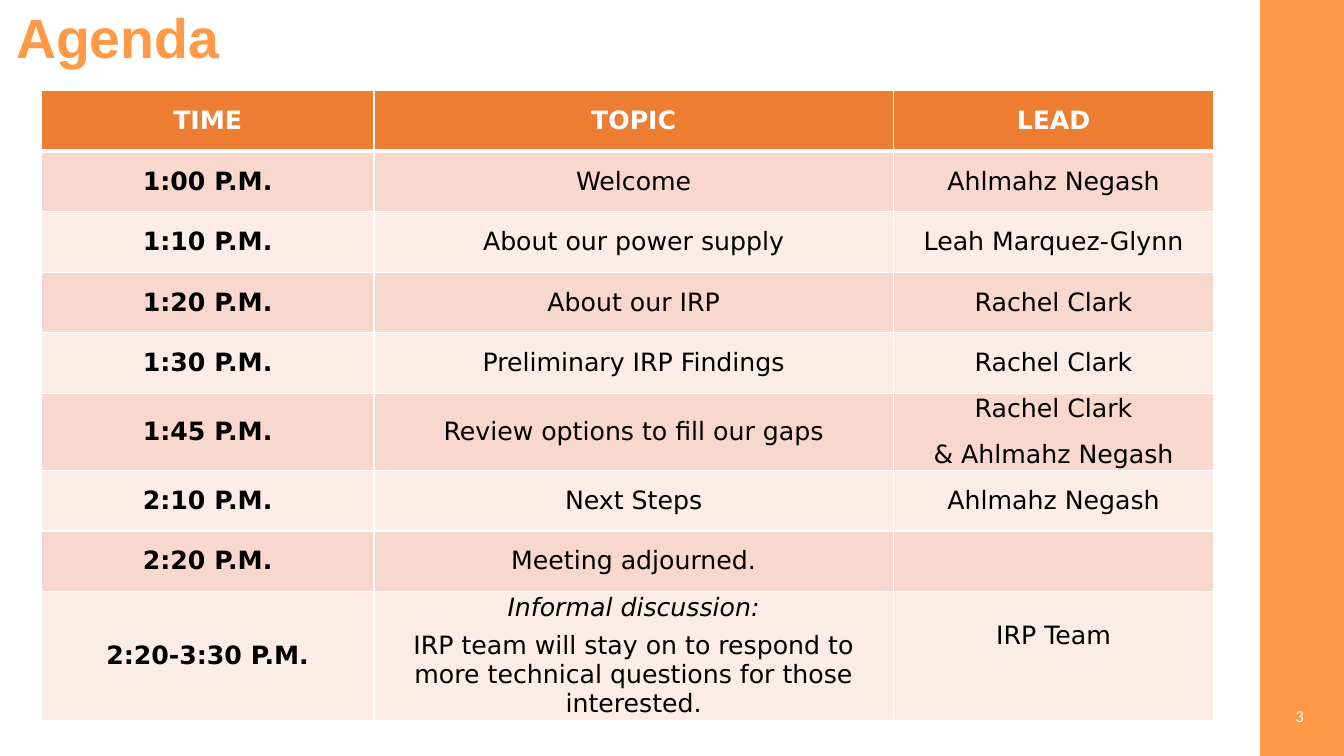
from dataclasses import dataclass

from lxml import etree
from pptx import Presentation
from pptx import util as u
from pptx.dml.color import RGBColor
from pptx.enum import shapes, text
from pptx.oxml.ns import qn


@dataclass(frozen=True)
class Theme:
    """Colours, fonts and type sizes of the agenda slide."""
    accent: str = "FF9946"
    header: str = "ED7D31"
    bands: tuple = ("F8D7CE", "FCECE8")
    white: str = "FFFFFF"
    black: str = "000000"
    title_font: str = "Arial"
    table_font: str = "DejaVu Sans"
    number_font: str = "Calibri"
    title_size: float = 39.6
    table_size: float = 18
    number_size: float = 12


THEME = Theme()
WIDTH, HEIGHT = 13.33, 7.5
COLUMNS = (3.3, 5.15, 3.18)
ROW, DOUBLE_ROW, LAST_ROW = 0.6, 0.75, 1.25
AGENDA = [
    ("TIME", "TOPIC", "LEAD"),
    ("1:00 P.M.", "Welcome", "Ahlmahz Negash"),
    ("1:10 P.M.", "About our power supply", "Leah Marquez-Glynn"),
    ("1:20 P.M.", "About our IRP", "Rachel Clark"),
    ("1:30 P.M.", "Preliminary IRP Findings", "Rachel Clark"),
    ("1:45 P.M.", "Review options to fill our gaps", "Rachel Clark\n& Ahlmahz Negash"),
    ("2:10 P.M.", "Next Steps", "Ahlmahz Negash"),
    ("2:20 P.M.", "Meeting adjourned.", ""),
    ("2:20-3:30 P.M.", "Informal discussion:\nIRP team will stay on to respond to "
     "more technical questions for those interested.", "IRP Team"),
]
ROWS = [ROW] * 5 + [DOUBLE_ROW] + [ROW] * 2 + [LAST_ROW]


def inches(*lengths):
    """Turn lengths in inches into slide units."""
    return [u.Inches(length) for length in lengths]


def style_font(font, name, size, color, bold=False):
    """Give a font its face, size, colour and weight."""
    font.name, font.size, font.bold = name, u.Pt(size), bold
    font.color.rgb = RGBColor.from_string(color)


def add_title(page, box):
    """Place the slide title in its placeholder."""
    title = page.shapes.title
    title.left, title.top, title.width, title.height = inches(*box)
    frame = title.text_frame
    frame.text = "Agenda"
    frame.word_wrap = True
    frame.auto_size = text.MSO_AUTO_SIZE.NONE
    frame.vertical_anchor = text.MSO_ANCHOR.MIDDLE
    para = frame.paragraphs[0]
    para.alignment = text.PP_ALIGN.LEFT
    para.line_spacing = 0.9
    style_font(para.runs[0].font, THEME.title_font, THEME.title_size, THEME.accent, True)


def add_side_band(page, box):
    """Draw the coloured band with the page number at its foot."""
    left, top, width, height = box
    band = page.shapes.add_shape(shapes.MSO_SHAPE.RECTANGLE, *inches(*box))
    band.shadow.inherit = False
    band.fill.solid()
    band.fill.fore_color.rgb = RGBColor.from_string(THEME.accent)
    band.line.color.rgb = RGBColor.from_string(THEME.accent)
    band.line.width = u.Pt(1)

    number_box = inches(left, top + 0.92 * height, 0.64 * width, 0.4)
    frame = page.shapes.add_textbox(*number_box).text_frame
    frame.word_wrap = True
    frame.vertical_anchor = text.MSO_ANCHOR.MIDDLE
    frame.text = "3"
    para = frame.paragraphs[0]
    para.alignment = text.PP_ALIGN.RIGHT
    style_font(para.runs[0].font, THEME.number_font, THEME.number_size, THEME.white)


def add_borders(cell, bottom_width, top_width):
    """Rule the four sides of a cell in white."""
    properties = cell._tc.get_or_add_tcPr()
    for side, width in (("L", 1), ("R", 1), ("T", top_width), ("B", bottom_width)):
        line = etree.SubElement(properties, qn(f"a:ln{side}"), w=str(u.Pt(width)))
        fill = etree.SubElement(line, qn("a:solidFill"))
        etree.SubElement(fill, qn("a:srgbClr"), val=THEME.white)


def fill_cell(cell, wording, row, column):
    """Write one agenda cell and format it by its place in the grid."""
    is_header = row == 0
    add_borders(cell, 3 if is_header else 1, 3 if row == 1 else 1)
    cell.fill.solid()
    color = THEME.header if is_header else THEME.bands[(row - 1) % 2]
    cell.fill.fore_color.rgb = RGBColor.from_string(color)
    cell.margin_left = cell.margin_right = u.Inches(0.07)
    cell.margin_top = cell.margin_bottom = 0
    cell.vertical_anchor = text.MSO_ANCHOR.MIDDLE
    cell.text_frame.text = wording
    for index, para in enumerate(cell.text_frame.paragraphs):
        para.alignment = text.PP_ALIGN.CENTER
        para.space_before = u.Pt(6 if index else 0)
        para.space_after = u.Pt(0 if row >= 7 and column == 1 else 6)
        style_font(para.font, THEME.table_font, THEME.table_size, THEME.black)
        for span in para.runs:
            style_font(span.font, THEME.table_font, THEME.table_size,
                       THEME.white if is_header else THEME.black,
                       is_header or column == 0)


def add_agenda(page, left, top):
    """Build the agenda table from its column widths and row heights."""
    frame = page.shapes.add_table(len(ROWS), len(COLUMNS),
                                  *inches(left, top, sum(COLUMNS), sum(ROWS)))
    table = frame.table
    table.horz_banding = False
    for column, width in zip(table.columns, COLUMNS):
        column.width = u.Inches(width)
    for row, height in zip(table.rows, ROWS):
        row.height = u.Inches(height)
    for row, entries in enumerate(AGENDA):
        for column, wording in enumerate(entries):
            fill_cell(table.cell(row, column), wording, row, column)
    last = len(ROWS) - 1
    table.cell(last, 1).text_frame.paragraphs[0].runs[0].font.italic = True
    table.cell(last, 2).margin_bottom = u.Inches(0.4)


def main():
    """Create the deck with its agenda slide."""
    deck = Presentation()
    deck.slide_width, deck.slide_height = inches(WIDTH, HEIGHT)
    page = deck.slides.add_slide(deck.slide_layouts[5])
    add_side_band(page, (12.5, 0, WIDTH - 12.5, HEIGHT))
    add_title(page, (0.06, 0.08, 10.21, 0.64))
    add_agenda(page, 0.41, 0.9)
    deck.save("out.pptx")


if __name__ == "__main__":
    main()
